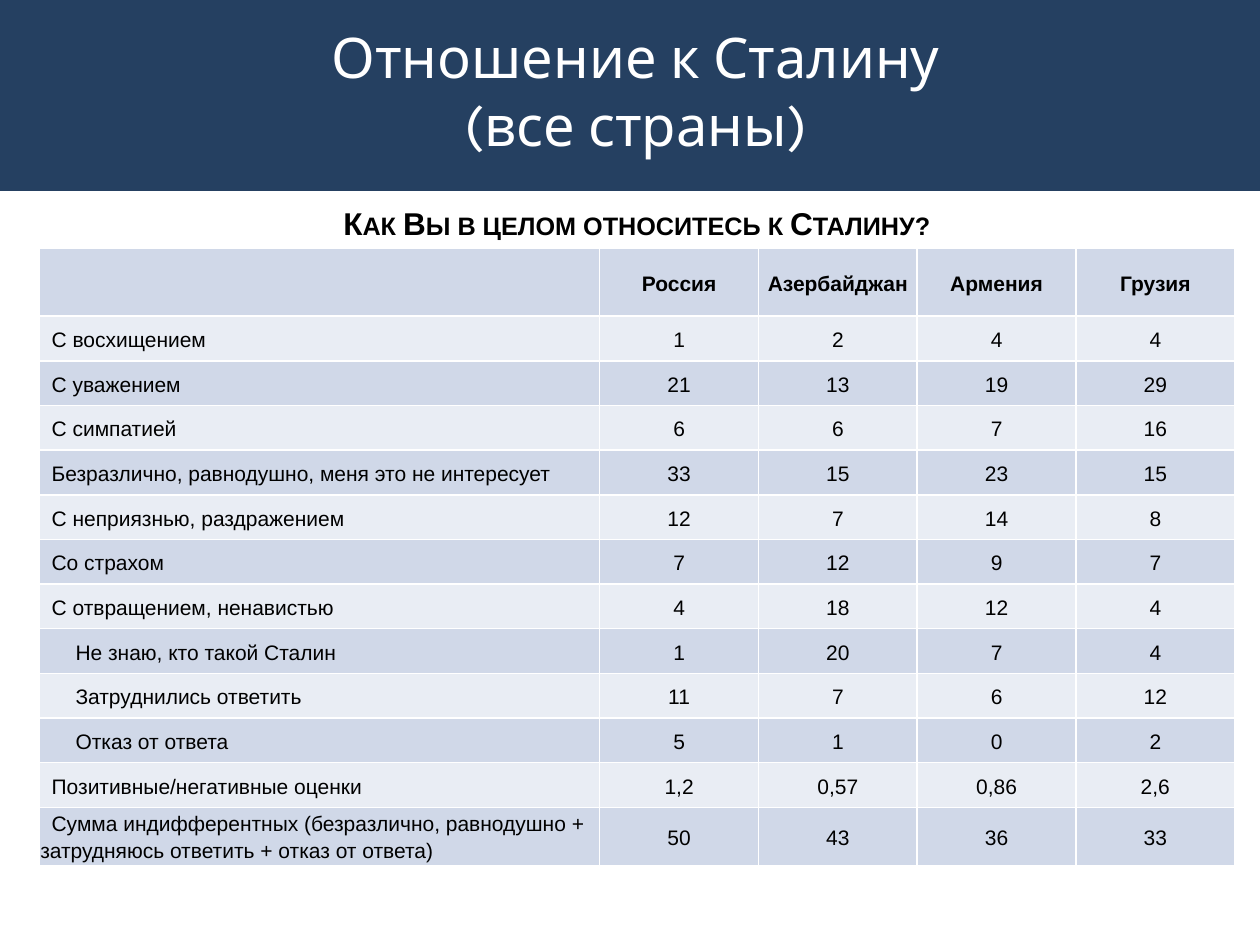
from pptx import Presentation
from pptx.dml.color import RGBColor
from pptx.enum.shapes import MSO_SHAPE as Shape
from pptx.enum.text import MSO_ANCHOR as Anchor, PP_ALIGN as Align
from pptx.util import Inches, Pt

NAVY = RGBColor(0x25, 0x40, 0x61)
WHITE = RGBColor(0xFF, 0xFF, 0xFF)
BLACK = RGBColor(0, 0, 0)
DARK = RGBColor(0xD0, 0xD8, 0xE8)
PALE = RGBColor(0xE9, 0xED, 0xF4)

HEADS = ["", "Россия", "Азербайджан", "Армения", "Грузия"]
ROWS = [
    ["С восхищением", "1", "2", "4", "4"],
    ["С уважением", "21", "13", "19", "29"],
    ["С симпатией", "6", "6", "7", "16"],
    ["Безразлично, равнодушно, меня это не интересует", "33", "15", "23", "15"],
    ["С неприязнью, раздражением", "12", "7", "14", "8"],
    ["Со страхом", "7", "12", "9", "7"],
    ["С отвращением, ненавистью", "4", "18", "12", "4"],
    ["Не знаю, кто такой Сталин", "1", "20", "7", "4"],
    ["Затруднились ответить", "11", "7", "6", "12"],
    ["Отказ от ответа", "5", "1", "0", "2"],
    ["Позитивные/негативные оценки", "1,2", "0,57", "0,86", "2,6"],
    ["Сумма индифферентных (безразлично, равнодушно + "
     "затрудняюсь ответить + отказ от ответа)", "50", "43", "36", "33"],
]
DEEP = ROWS[7:10]


def style(para, name, size, color, bold=False):
    font = para.font
    font.name, font.size, font.bold = name, Pt(size), bold
    font.color.rgb = color


def write(cell, text, size, bold, align):
    cell.vertical_anchor = Anchor.MIDDLE
    cell.margin_left = cell.margin_right = Inches(0.01)
    cell.margin_top = cell.margin_bottom = 0
    para = cell.text_frame.paragraphs[0]
    para.text = text
    para.alignment = align
    para.line_spacing = 1.15
    style(para, "Arial", size, BLACK, bold)
    return para


deck = Presentation()
deck.slide_width, deck.slide_height = Inches(10), Inches(7.5)
W, H = deck.slide_width, deck.slide_height
slide = deck.slides.add_slide(deck.slide_layouts[6])

band = slide.shapes.add_shape(Shape.RECTANGLE, 0, 0, W, int(H * 0.2))
band.shadow.inherit = False
band.fill.solid()
band.fill.fore_color.rgb = NAVY
band.line.color.rgb = NAVY
band.line.width = Pt(2)

title = slide.shapes.add_textbox(Inches(0.2), Inches(0.28), Inches(9.69), Inches(0.87))
frame = title.text_frame
frame.word_wrap = True
frame.vertical_anchor = Anchor.MIDDLE
frame.text = "Отношение к Сталину\n(все страны)"
for para in frame.paragraphs:
    para.alignment = Align.CENTER
    style(para, "Karla", 32, WHITE)

wide = [4.45] + [1.26] * 4
high = [0.41, 0.54] + [3.9 / 11] * 11 + [0.44]
grid = slide.shapes.add_table(len(high), len(wide), Inches(0.31), Inches(1.56),
                              Inches(sum(wide)), Inches(sum(high))).table
grid.first_row = grid.horz_banding = False
for col, size in zip(grid.columns, wide):
    col.width = Inches(size)
for row, size in zip(grid.rows, high):
    row.height = Inches(size)

top = grid.cell(0, 0)
top.merge(grid.cell(0, 4))
top.fill.background()
ask = write(top, "Как Вы в целом относитесь к Сталину?", 18, True, Align.CENTER)
ask.font._element.set("cap", "small")

for r, row in enumerate([HEADS] + ROWS, 1):
    for c, text in enumerate(row):
        cell = grid.cell(r, c)
        cell.fill.solid()
        cell.fill.fore_color.rgb = DARK if r % 2 else PALE
        label = c == 0
        para = write(cell, text, 12, r == 1, Align.LEFT if label else Align.CENTER)
        if r > 1:
            para.space_after = Pt(1.5)
        if label:
            dent = Inches(0.28 if row in DEEP else 0.09)
            para._p.get_or_add_pPr().set("indent", str(dent))

deck.save("out.pptx")
